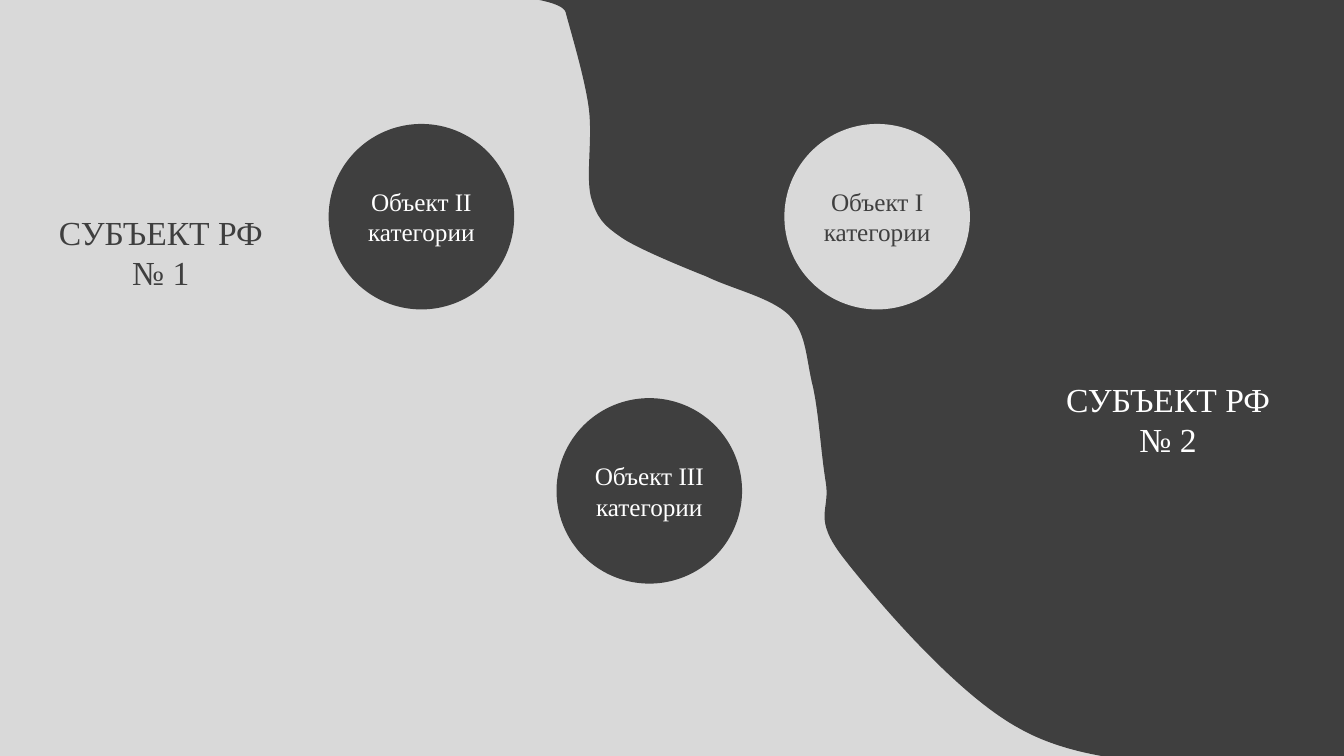
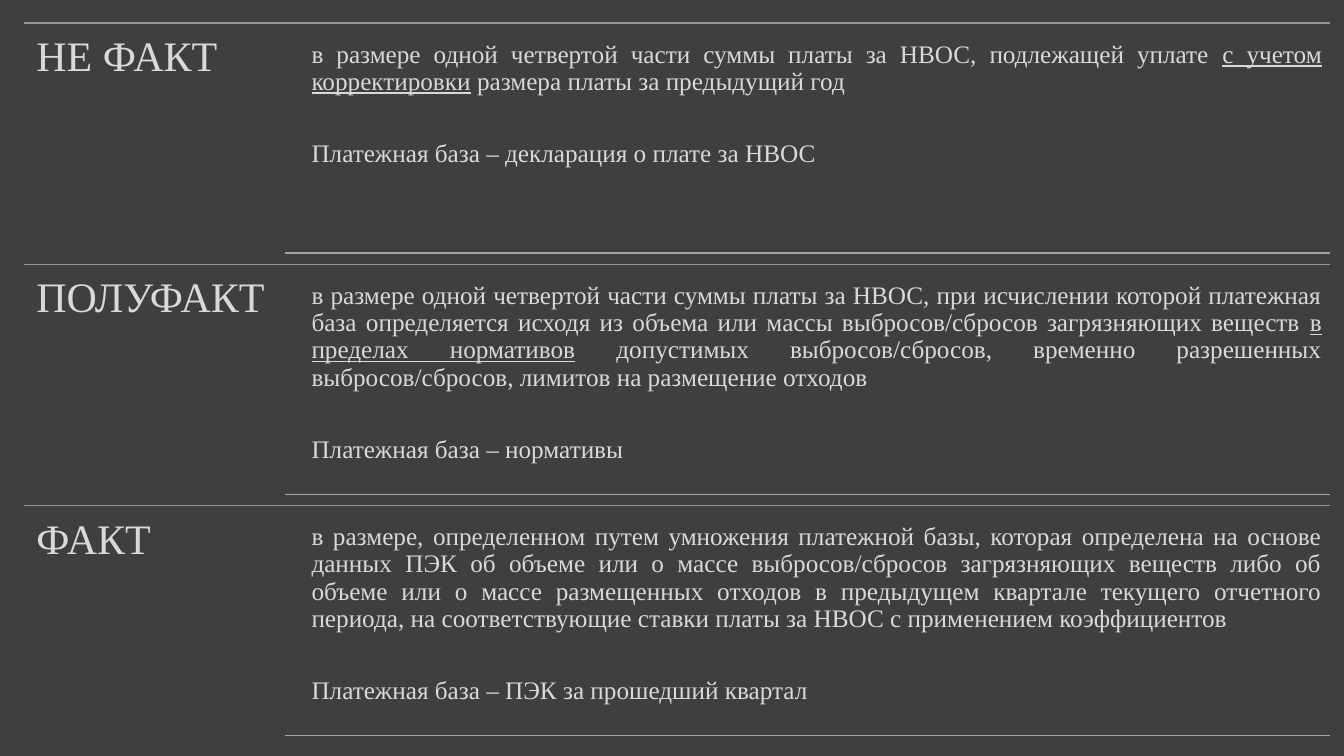
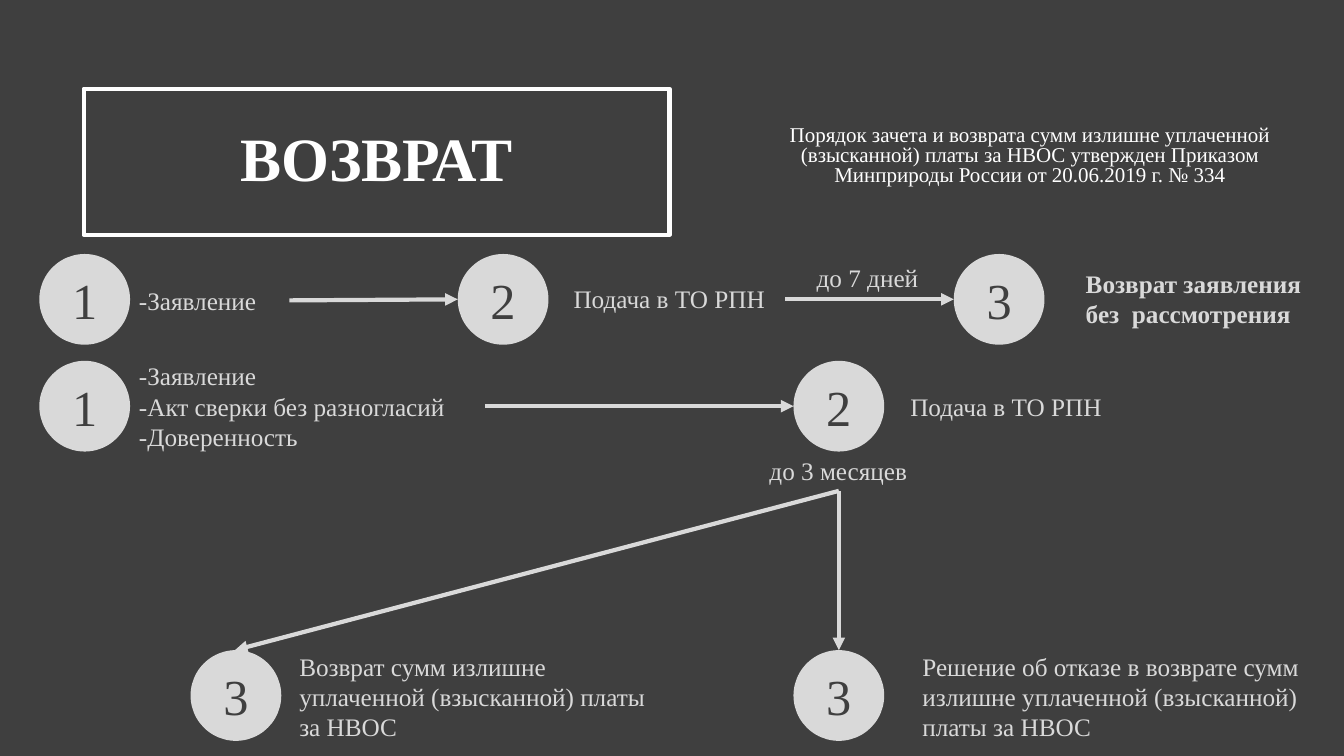
from pptx import Presentation
from pptx.dml.color import RGBColor
from pptx.enum.shapes import MSO_CONNECTOR, MSO_SHAPE
from pptx.enum.text import MSO_ANCHOR, PP_ALIGN
from pptx.oxml.ns import qn
from pptx.util import Inches, Pt
from lxml.etree import SubElement

DARK = RGBColor(0x3F, 0x3F, 0x3F)
PALE = RGBColor(0xD9, 0xD9, 0xD9)
WHITE = RGBColor(0xFF, 0xFF, 0xFF)
RULE = RGBColor(0x96, 0x96, 0x96)
THIN = RGBColor(0xA5, 0xA5, 0xA5)
FONT = "Times New Roman"
LEFT, MID, JUST = PP_ALIGN.LEFT, PP_ALIGN.CENTER, PP_ALIGN.JUSTIFY


def put(page, at, text, size, color, align=LEFT, bold=False, form=None,
        fill=None, pad=None, lead=None):
    """Add a text box or preset shape; text between underscores is underlined."""
    box = [Inches(n) for n in at]
    if form is None:
        item = page.shapes.add_textbox(*box)
    else:
        item = page.shapes.add_shape(form, *box)
        item.shadow.inherit = False
        item.line.fill.background()
        if fill is None:
            item.fill.background()
        else:
            item.fill.solid()
            item.fill.fore_color.rgb = fill
    frame = item.text_frame
    frame.word_wrap = True
    frame.vertical_anchor = MSO_ANCHOR.TOP if form is None else MSO_ANCHOR.MIDDLE
    if pad is not None:
        frame.margin_left = frame.margin_right = Inches(pad)
        frame.margin_top = frame.margin_bottom = Inches(pad)
    for row, words in enumerate(text.split("\n")):
        para = frame.add_paragraph() if row else frame.paragraphs[0]
        para.alignment = align
        if lead is not None:
            para.line_spacing = lead
        for part, piece in enumerate(words.split("_")):
            run = para.add_run()
            run.text = piece
            font = run.font
            font.name, font.size, font.bold = FONT, Pt(size), bold
            font.color.rgb = color
            if part % 2:
                font.underline = True
    return item


def join(page, ends, color, width, arrow=False):
    """Draw a straight line, with an arrowhead at its end if wanted."""
    link = page.shapes.add_connector(
        MSO_CONNECTOR.STRAIGHT, *[Inches(n) for n in ends])
    link.line.color.rgb = color
    link.line.width = Pt(width)
    props = link._element.spPr
    if arrow:
        SubElement(props.find(qn("a:ln")), qn("a:tailEnd"), type="triangle")
    SubElement(props, qn("a:effectLst"))


deck = Presentation()
deck.slide_width, deck.slide_height = Inches(13.33), Inches(7.5)
pages = []
for tone in (PALE, DARK, DARK):
    page = deck.slides.add_slide(deck.slide_layouts[6])
    page.background.fill.solid()
    page.background.fill.fore_color.rgb = tone
    pages.append(page)
map_page, fact_page, flow_page = pages

# Slide 1: dark region, each curve as two control points and an end
start = (5.53, -0.1)
curves = [
    ((4.23, -0.05), (5.55, -0.08), (5.61, 0.12)),
    ((5.66, 0.31), (5.8, 0.77), (5.84, 1.07)),
    ((5.88, 1.38), (5.81, 1.73), (5.86, 1.95)),
    ((5.92, 2.16), (5.98, 2.23), (6.17, 2.36)),
    ((6.36, 2.49), (7, 2.74), (7, 2.74)),
    ((7.27, 2.87), (7.64, 2.95), (7.82, 3.12)),
    ((7.99, 3.29), (7.99, 3.5), (8.05, 3.78)),
    ((8.12, 4.05), (8.14, 4.48), (8.19, 4.78)),
    ((8.24, 5.07), (8.05, 5.13), (8.37, 5.54)),
    ((8.69, 5.95), (9.48, 6.88), (10.1, 7.22)),
    ((10.71, 7.57), (11.52, 7.56), (12.07, 7.62)),
    ((12.63, 7.67), (13.2, 8.2), (13.43, 7.54)),
    ((13.66, 6.88), (13.46, 4.95), (13.46, 3.67)),
    ((13.46, 2.39), (14.76, 0.51), (13.44, -0.13)),
    ((12.12, -0.76), (6.84, -0.14), start),
]
pen = map_page.shapes.build_freeform(Inches(start[0]), Inches(start[1]), scale=1.0)
pen.add_line_segments([(Inches(x), Inches(y)) for _, _, (x, y) in curves], close=True)
land = pen.convert_to_shape()
land.shadow.inherit = False
land.fill.solid()
land.fill.fore_color.rgb = DARK
land.line.fill.background()

# Bend the straight segments into Bezier curves
sides = list(land._element.iter(qn("a:lnTo")))
for side, curve in zip(sides, curves):
    bend = SubElement(side.getparent(), qn("a:cubicBezTo"))
    for x, y in curve:
        SubElement(bend, qn("a:pt"), x=str(Inches(x) - land.left),
                   y=str(Inches(y) - land.top))
    side.getparent().replace(side, bend)

put(map_page, (0.42, 2.05, 2.35, 0.91), "СУБЪЕКТ РФ № 1", 24, DARK, MID)
put(map_page, (10.1, 3.71, 2.97, 0.91), "СУБЪЕКТ РФ\n№ 2", 24, WHITE, MID)
for x, y, rank, fill, ink in [(3.26, 1.23, "II", DARK, WHITE),
                              (7.78, 1.23, "I", PALE, DARK),
                              (5.52, 3.95, "III", DARK, WHITE)]:
    put(map_page, (x, y, 1.84, 1.84), f"Объект {rank} категории", 18, ink, MID,
        form=MSO_SHAPE.OVAL, fill=fill)

# Slide 2: three ruled rows
rows = [
    ("НЕ ФАКТ",
     "в размере одной четвертой части суммы платы за НВОС, подлежащей уплате "
     "_с учетом корректировки_ размера платы за предыдущий год",
     "декларация о плате за НВОС"),
    ("ПОЛУФАКТ",
     "в размере одной четвертой части суммы платы за НВОС, при исчислении "
     "которой платежная база определяется исходя из объема или массы "
     "выбросов/сбросов загрязняющих веществ _в пределах нормативов_ допустимых "
     "выбросов/сбросов, временно разрешенных выбросов/сбросов, лимитов на "
     "размещение отходов",
     "нормативы"),
    ("ФАКТ",
     "в размере, определенном путем умножения платежной базы, которая "
     "определена на основе данных ПЭК об объеме или о массе выбросов/сбросов "
     "загрязняющих веществ либо об объеме или о массе размещенных отходов в "
     "предыдущем квартале текущего отчетного периода, на соответствующие "
     "ставки платы за НВОС с применением коэффициентов",
     "ПЭК за прошедший квартал"),
]
pitch = 7.18 / len(rows)
for row, (name, rule, base) in enumerate(rows):
    top = 0.23 + row * pitch
    join(fact_page, (0.24, top, 13.19, top), RULE, 1)
    put(fact_page, (0.24, top, 2.59, 2.39), name, 30, PALE, pad=0.12, lead=0.9)
    body = put(fact_page, (3.02, top + 0.11, 10.16, 2.17),
               f"{rule}\nПлатежная база – {base}", 18, PALE, JUST,
               pad=0.07, lead=0.9)
    body.text_frame.paragraphs[1].space_before = Pt(32)
    join(fact_page, (2.83, top + 2.28, 13.19, top + 2.28), THIN, 1)

# Slide 3: heading
head = put(flow_page, (0.83, 0.88, 5.81, 1.45), "ВОЗВРАТ", 44, WHITE, MID, True,
           form=MSO_SHAPE.RECTANGLE, lead=0.9)
head.line.color.rgb = WHITE
head.line.width = Pt(3)
head.text_frame.paragraphs[0].space_after = Pt(6)
put(flow_page, (7.31, 1.2, 5.81, 0.81),
    "Порядок зачета и возврата сумм излишне уплаченной (взысканной) платы за "
    "НВОС утвержден Приказом Минприроды России от 20.06.2019 г. № 334",
    15, WHITE, MID, lead=0.8)

# Arrows
for ends in [(2.87, 2.98, 4.54, 2.97), (7.79, 2.97, 9.46, 2.97),
             (4.81, 4.03, 7.87, 4.03), (8.32, 4.87, 2.33, 6.45),
             (8.32, 4.87, 8.32, 6.45)]:
    join(flow_page, ends, PALE, 3, arrow=True)

# Numbered steps
for x, y, digit in [(0.39, 2.52, 1), (4.54, 2.52, 2), (9.46, 2.52, 3),
                    (0.39, 3.58, 1), (7.87, 3.58, 2),
                    (1.89, 6.45, 3), (7.87, 6.45, 3)]:
    put(flow_page, (x, y, 0.9, 0.9), str(digit), 36, DARK, MID,
        form=MSO_SHAPE.OVAL, fill=PALE)

# Step labels
SEND = "Подача в ТО РПН"
for at, text, align, bold in [
    ((1.28, 2.78, 1.59, 0.4), "-Заявление", LEFT, False),
    ((5.59, 2.76, 2.2, 0.4), SEND, LEFT, False),
    ((7.77, 2.55, 1.73, 0.4), "до 7 дней ", MID, False),
    ((10.67, 2.61, 2.45, 0.71), "Возврат заявления без  рассмотрения", LEFT, True),
    ((1.28, 3.53, 3.52, 1.01),
     "-Заявление\n-Акт сверки без разногласий\n-Доверенность", LEFT, False),
    ((8.93, 3.83, 3.52, 0.4), SEND, LEFT, False),
    ((7.45, 4.47, 1.73, 0.4), "до 3 месяцев", MID, False),
    ((2.87, 6.41, 3.77, 1.01),
     "Возврат сумм излишне уплаченной (взысканной) платы за НВОС", LEFT, False),
    ((9.05, 6.41, 3.94, 1.01),
     "Решение об отказе в возврате сумм излишне уплаченной (взысканной) "
     "платы за НВОС", LEFT, False),
]:
    put(flow_page, at, text, 18, PALE, align, bold)

deck.save("out.pptx")
